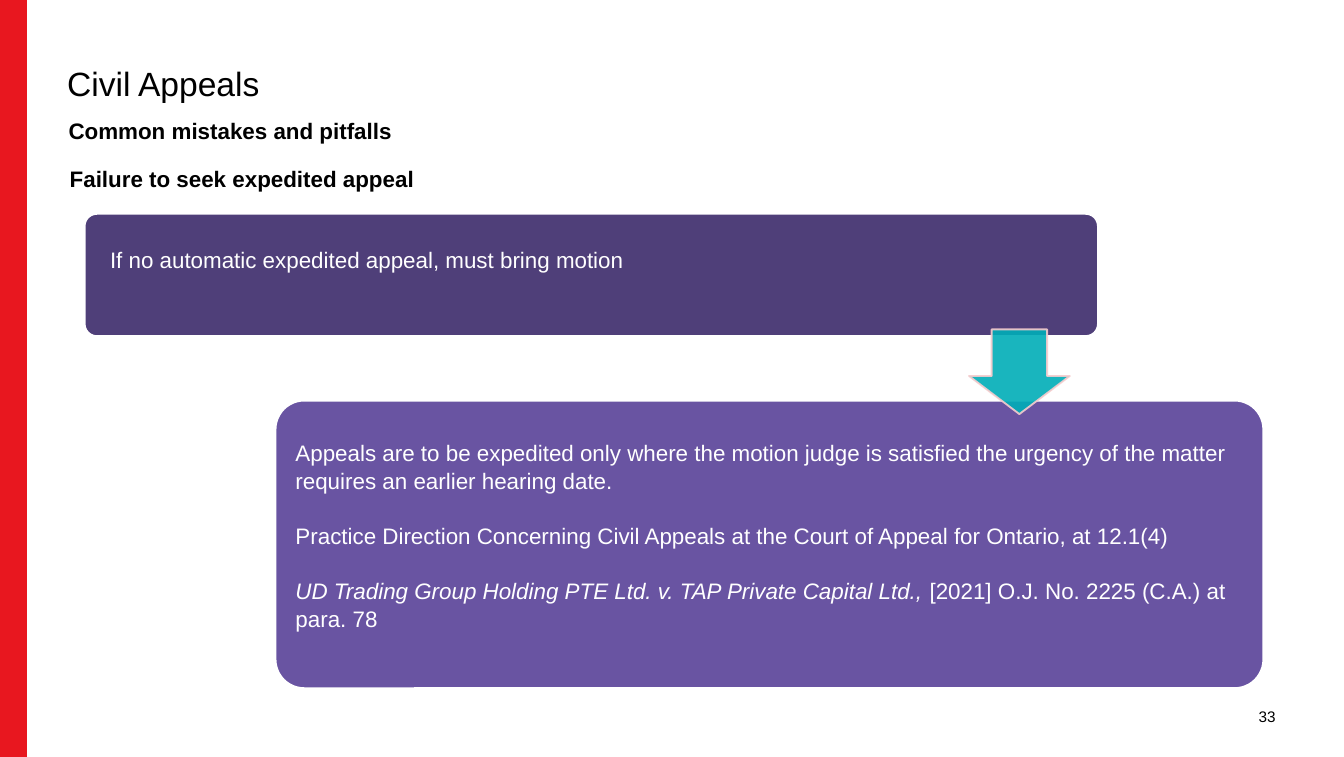
from lxml.etree import SubElement
from pptx import Presentation
from pptx.dml.color import RGBColor
from pptx.enum.shapes import MSO_SHAPE
from pptx.enum.text import MSO_ANCHOR, PP_ALIGN
from pptx.oxml.ns import qn
from pptx.util import Pt

COLORS = {"red": "E8171F", "dark": "4F3F79", "purple": "6954A2", "teal": "00ADB8",
          "pink": "F6CCCD", "white": "FFFFFF", "black": "000000"}
HEADING = {"size": Pt(12), "bold": True}
BODY = {"size": Pt(12)}
CITATION = {"size": Pt(12), "italic": True}

# preset, box (left, top, width, height), adjustments, fill, line, opacity in percent
SHAPES = [
    (MSO_SHAPE.RECTANGLE, (0, 0, 14.4, 405.36), [], "red", None, 100),
    (MSO_SHAPE.ROUNDED_RECTANGLE, (45.36, 114.5, 542.9, 65.5), [0.1], "dark", "white", 100),
    (MSO_SHAPE.ROUNDED_RECTANGLE, (147.6, 214.5, 529.2, 154), [0.1], "purple", "white", 100),
    (MSO_SHAPE.DOWN_ARROW, (519.1, 176.4, 54, 45.36), [0.55, 0.45], "teal", "pink", 90),
]

# box, colour, paragraphs (lists of (text, font)), layout options
TEXTS = [
    ((643, 362.2, 40.3, 43.2), "black", [[("33", {"size": Pt(8.2)})]],
     {"inset": (0, 0), "align": PP_ALIGN.RIGHT, "anchor": MSO_ANCHOR.MIDDLE}),
    ((36, 36, 648, 26.64), "black", [[("Civil Appeals", {"size": Pt(18)})]],
     {"inset": (0, 0), "spacing": 0.9}),
    ((36.72, 62.64, 647.3, 16.56), "black", [[("Common mistakes and pitfalls", HEADING)]],
     {"inset": (0, 0)}),
    ((30.24, 85, 315.4, 21.6), "black", [[("Failure to seek expedited appeal", HEADING)]], {}),
    ((51.84, 128.2, 519.8, 21.6), "white",
     [[("If no automatic expedited appeal, must bring motion", BODY)]],
     {"align": PP_ALIGN.JUSTIFY}),
    ((151.2, 231.1, 532.1, 123.8), "white", [
        [("Appeals are to be expedited only where the motion judge is satisfied the urgency "
          "of the matter requires an earlier hearing date.", BODY)],
        [("Practice Direction Concerning Civil Appeals at the Court of Appeal for Ontario, "
          "at 12.1(4)", BODY)],
        [("UD Trading Group Holding PTE Ltd. v. TAP Private Capital Ltd., ", CITATION),
         ("[2021] O.J. No. 2225 (C.A.) at para. 78", BODY)],
    ], {"spacing": 1.04, "gap": 14.4}),
]


def rgb(name):
    return RGBColor.from_string(COLORS[name])


def set_opacity(sp, percent):
    for color in sp._element.spPr.iter(qn("a:srgbClr")):
        SubElement(color, qn("a:alpha"), val=str(percent * 1000))


def add_shape(s, preset, box, adjustments, fill, line, opacity):
    sp = s.shapes.add_shape(preset, *map(Pt, box))
    sp.shadow.inherit = False
    for i, value in enumerate(adjustments):
        sp.adjustments[i] = value
    sp.fill.solid()
    sp.fill.fore_color.rgb = rgb(fill)
    if line:
        sp.line.color.rgb = rgb(line)
        sp.line.width = Pt(1)
    else:
        sp.line.fill.background()
    if opacity < 100:
        set_opacity(sp, opacity)


def add_text(s, box, color, paragraphs, options):
    tf = s.shapes.add_textbox(*map(Pt, box)).text_frame
    tf.word_wrap = True
    tf.vertical_anchor = options.get("anchor", MSO_ANCHOR.TOP)
    side, end = map(Pt, options.get("inset", (7.2, 3.6)))
    tf.margin_left = tf.margin_right = side
    tf.margin_top = tf.margin_bottom = end
    for i, runs in enumerate(paragraphs):
        p = tf.add_paragraph() if i else tf.paragraphs[0]
        p.alignment = options.get("align", PP_ALIGN.LEFT)
        p.line_spacing = options.get("spacing", 1.0)
        if i:
            p.space_before = Pt(options["gap"])
        for text, font in runs:
            r = p.add_run()
            r.text = text
            r.font.color.rgb = rgb(color)
            for name, value in {"name": "Arial", **font}.items():
                setattr(r.font, name, value)


def main():
    prs = Presentation()
    prs.slide_width, prs.slide_height = Pt(720), Pt(405.36)
    s = prs.slides.add_slide(prs.slide_layouts[6])
    for shape in SHAPES:
        add_shape(s, *shape)
    for text in TEXTS:
        add_text(s, *text)
    prs.save("out.pptx")


if __name__ == "__main__":
    main()
